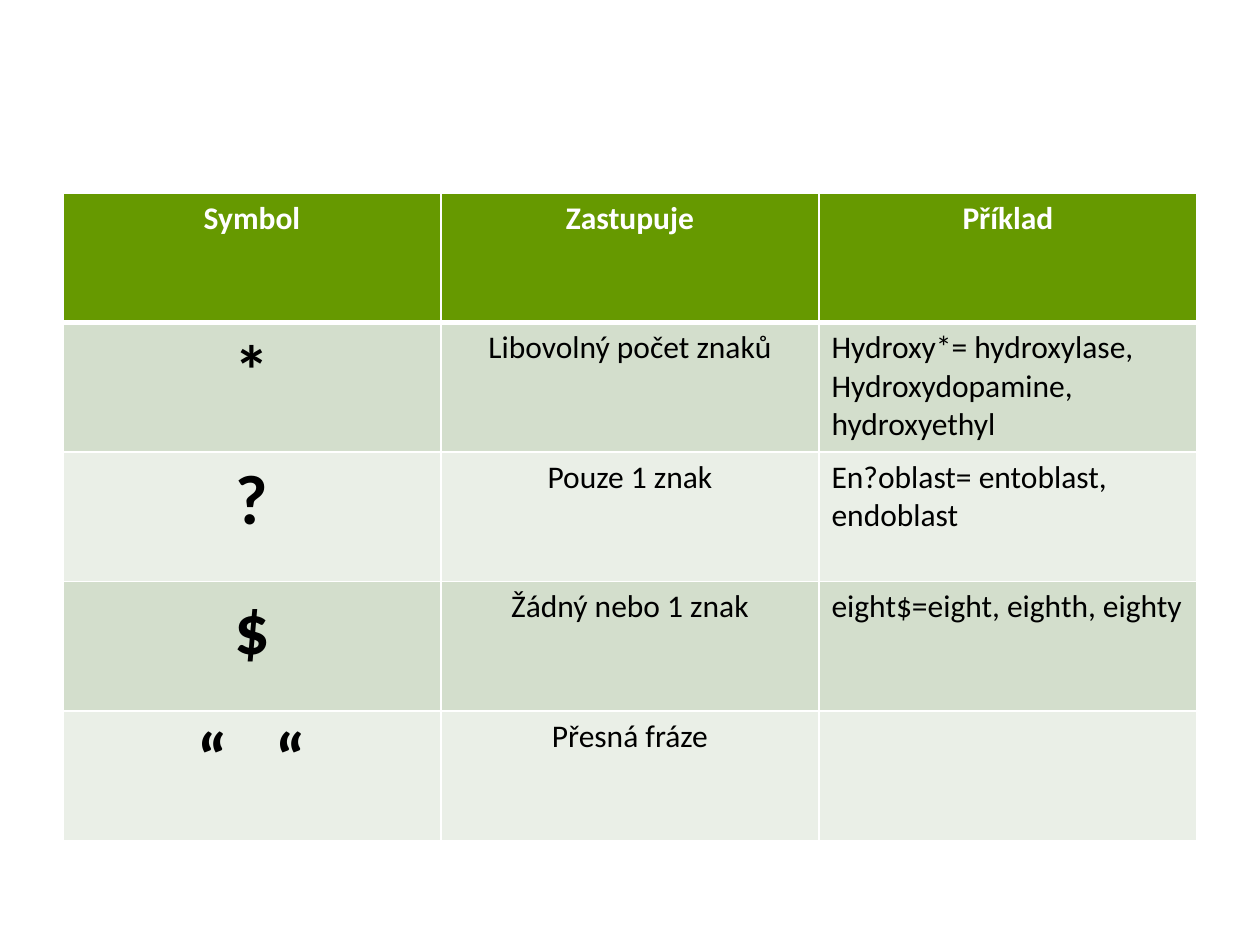
from lxml.etree import SubElement
from pptx import Presentation
from pptx.dml.color import RGBColor
from pptx.enum.text import PP_ALIGN as Align
from pptx.oxml import parse_xml
from pptx.oxml.ns import nsdecls, qn
from pptx.util import Inches, Pt

HEADINGS = ["Symbol", "Zastupuje", "Příklad"]
WILDCARDS = [
    ["*", "Libovolný počet znaků", "Hydroxy*= hydroxylase,\nHydroxydopamine, hydroxyethyl"],
    ["?", "Pouze 1 znak", "En?oblast= entoblast, endoblast"],
    ["$", "Žádný nebo 1 znak", "eight$=eight, eighth, eighty"],
    ["“ “", "Přesná fráze", ""],
]
HEADING = {"size": Pt(18), "bold": True, "color": "FFFFFF", "align": Align.CENTER}
COLUMN_FORMATS = [
    {"size": Pt(40), "bold": True, "color": "000000", "align": Align.CENTER, "gap": Pt(18)},
    {"size": Pt(18), "bold": False, "color": "000000", "align": Align.CENTER},
    {"size": Pt(18), "bold": False, "color": "000000", "align": Align.LEFT},
]
HEADING_FILL = "669900"
BAND_FILLS = ["D3DECC", "EAEFE7"]
RULE_COLOR = "FFFFFF"


def rgb(hex_color):
    """Turn a hex string into a colour."""
    return RGBColor.from_string(hex_color)


def set_font(font, style):
    """Apply the size, weight and colour of a text style."""
    for name, value in {"name": "Calibri", "size": style["size"], "bold": style["bold"]}.items():
        setattr(font, name, value)
    font.color.rgb = rgb(style["color"])


def write_text(cell, text, style):
    """Write one paragraph per line, widening the word gap where the style asks for it."""
    cell.text = text
    for paragraph in cell.text_frame.paragraphs:
        paragraph.alignment = style["align"]
        if "gap" in style:
            words = paragraph.text.partition(" ")
            paragraph.clear()
            for word in filter(None, words):
                run = paragraph.add_run()
                run.text = word
                if word == " ":
                    run.font._element.set("spc", str(int(style["gap"].pt * 100)))
        set_font(paragraph.font, style)
        for run in paragraph.runs:
            set_font(run.font, style)


def draw_borders(cell, top, bottom):
    """Rule the four sides of a cell, with given top and bottom widths."""
    properties = cell._tc.get_or_add_tcPr()
    widths = {"lnL": Pt(1), "lnR": Pt(1), "lnT": top, "lnB": bottom}
    for position, (side, width) in enumerate(widths.items()):
        rule = parse_xml(f'<a:{side} {nsdecls("a")} w="{width}"/>')
        paint = SubElement(rule, qn("a:solidFill"))
        SubElement(paint, qn("a:srgbClr"), val=RULE_COLOR)
        properties.insert(position, rule)


def add_wildcard_table(slide, left, top, width, height):
    """Place the table of search symbols in the given box."""
    rows = [HEADINGS] + WILDCARDS
    table = slide.shapes.add_table(len(rows), len(HEADINGS), left, top, width, height).table
    table.horz_banding = False
    for row_index, texts in enumerate(rows):
        is_heading = row_index == 0
        fill = HEADING_FILL if is_heading else BAND_FILLS[(row_index - 1) % 2]
        for column, text in enumerate(texts):
            cell = table.cell(row_index, column)
            cell.fill.solid()
            cell.fill.fore_color.rgb = rgb(fill)
            write_text(cell, text, HEADING if is_heading else COLUMN_FORMATS[column])
            draw_borders(cell, Pt(3 if row_index == 1 else 1), Pt(3 if is_heading else 1))


def main():
    """Build and save the slide."""
    deck = Presentation()
    deck.slide_width, deck.slide_height = Inches(10), Inches(7.5)
    slide = deck.slides.add_slide(deck.slide_layouts[6])
    add_wildcard_table(slide, Inches(0.5), Inches(1.53), Inches(9), Inches(5.14))
    deck.save("out.pptx")


if __name__ == "__main__":
    main()
